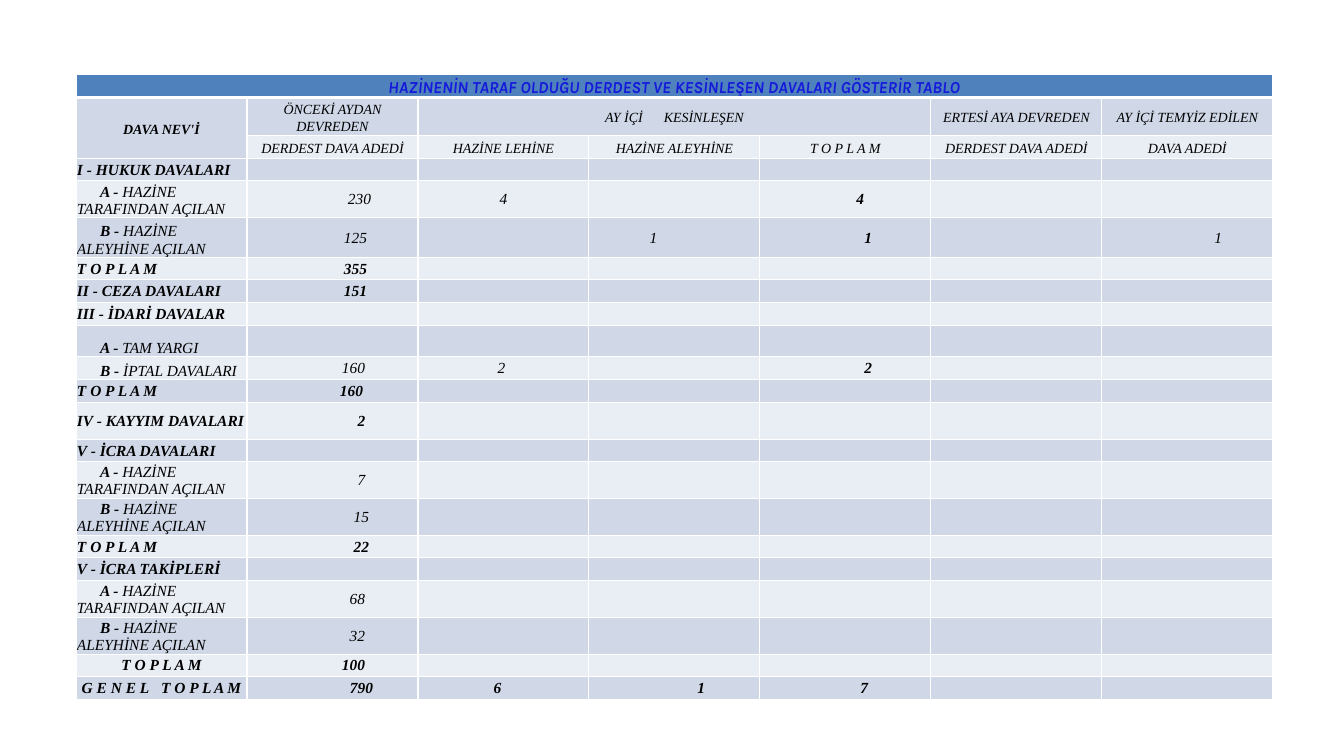
from lxml import etree
from pptx import Presentation
from pptx import util as u
from pptx.dml.color import RGBColor
from pptx.enum import text
from pptx.oxml.ns import qn

# Content: "~" marks one widened space
TITLE = "HAZİNENİN TARAF OLDUĞU DERDEST VE KESİNLEŞEN DAVALARI GÖSTERİR TABLO"
HEADERS = [
    {0: "DAVA NEV'İ", 1: "ÖNCEKİ AYDAN DEVREDEN", 2: "AY İÇİ~KESİNLEŞEN",
     5: "ERTESİ AYA DEVREDEN", 6: "AY İÇİ TEMYİZ EDİLEN"},
    {1: "DERDEST DAVA ADEDİ", 2: "HAZİNE LEHİNE", 3: "HAZİNE ALEYHİNE",
     4: "T O P L A M", 5: "DERDEST DAVA ADEDİ", 6: "DAVA ADEDİ"},
]
BY_TREASURY, AGAINST = "HAZİNE TARAFINDAN AÇILAN", "HAZİNE ALEYHİNE AÇILAN"
TOTAL = "T O P L A M"
# (letter, label, height px, {column: (value, px right of the column centre)})
ROWS = [
    ("", "I - HUKUK DAVALARI", 22, {}),
    ("A", BY_TREASURY, 37, {1: (230, 27), 2: (4, 0), 4: (4, 15)}),
    ("B", AGAINST, 40, {1: (125, 23), 3: (1, -21), 4: (1, 23), 6: (1, 31)}),
    ("", TOTAL, 22, {1: (355, 23)}),
    ("", "II - CEZA DAVALARI", 23, {1: (151, 23)}),
    ("", "III - İDARİ DAVALAR", 23, {}),
    ("A", "TAM YARGI", 31, {}),
    ("B", "İPTAL DAVALARI", 23, {1: (160, 21), 2: (2, -2), 4: (2, 23)}),
    ("", TOTAL, 23, {1: (160, 19)}),
    ("", "IV - KAYYIM DAVALARI", 37, {1: (2, 29)}),
    ("", "V - İCRA DAVALARI", 22, {}),
    ("A", BY_TREASURY, 37, {1: (7, 29)}),
    ("B", AGAINST, 37, {1: (15, 29)}),
    ("", TOTAL, 22, {1: (22, 29)}),
    ("", "V - İCRA TAKİPLERİ", 23, {}),
    ("A", BY_TREASURY, 37, {1: (68, 25)}),
    ("B", AGAINST, 37, {1: (32, 25)}),
    ("", TOTAL, 22, {1: (100, 21)}),
    ("", "G E N E L~T O P L A M", 23, {1: (790, 29), 2: (6, -6), 3: (1, 27), 4: (7, 19)}),
]
HEIGHTS = [23, 38, 23] + [row[2] for row in ROWS]
COLUMNS, COLUMN_WIDTH, LEFT, TOP = 7, 171, 76, 74
SUB_INDENT = 23
HEADER_GAP, TOTAL_GAP = 1250, 550  # extra width of "~", hundredths of a point

WHITE = RGBColor(0xFF, 0xFF, 0xFF)
BLACK = RGBColor(0, 0, 0)
TITLE_BLUE = RGBColor(0x15, 0x1A, 0xDB)
TITLE_FILL = RGBColor(0x4F, 0x81, 0xBD)
BANDS = [RGBColor(0xE9, 0xED, 0xF4), RGBColor(0xD0, 0xD8, 0xE8)]
CENTER, LEFT_ALIGN = text.PP_ALIGN.CENTER, text.PP_ALIGN.LEFT
MIDDLE, BOTTOM = text.MSO_ANCHOR.MIDDLE, text.MSO_ANCHOR.BOTTOM
SERIF = {"name": "Times New Roman", "italic": True}
BODY = {**SERIF, "size": u.Pt(11)}
HEAD = {**SERIF, "size": u.Pt(10)}


def px(length):
    return u.Emu(round(length * 914400 / 100.8))


def set_all(target, values):
    for name, value in values.items():
        setattr(target, name, value)


def add_span(para, words, font, bold, color=BLACK):
    span = para.add_run()
    span.text = words
    set_all(span.font, {**font, "bold": bold})
    span.font.color.rgb = color
    return span


def write(cell, spans, font, align=CENTER, anchor=MIDDLE, spacing=None,
          shift=0, gap=0, color=BLACK):
    """Fill a cell with (words, bold) spans, moved sideways by shift."""
    set_all(cell, {"vertical_anchor": anchor, "margin_left": px(1 + 2 * max(shift, 0)),
                   "margin_right": px(1 + 2 * max(-shift, 0))})
    para = cell.text_frame.paragraphs[0]
    set_all(para, {"alignment": align, "line_spacing": spacing})
    for words, bold in spans:
        for number, part in enumerate(words.split("~")):
            if number:
                space = add_span(para, " ", font, bold, color)
                space.font._element.set("spc", str(gap))
            add_span(para, part, font, bold, color)
    return para


def format_cell(cell, fill, bottom=1):
    set_all(cell, {"margin_left": 0, "margin_right": 0,
                   "margin_top": px(1), "margin_bottom": 0})
    properties = cell._tc.get_or_add_tcPr()
    for side, points in (("L", 1), ("R", 1), ("T", 1), ("B", bottom)):
        line = etree.SubElement(properties, qn("a:ln" + side), w=str(u.Pt(points)))
        paint = etree.SubElement(line, qn("a:solidFill"))
        etree.SubElement(paint, qn("a:srgbClr"), val=str(WHITE))
    cell.fill.solid()
    cell.fill.fore_color.rgb = fill
    # Small end mark keeps empty rows at their height
    paragraph = cell.text_frame.paragraphs[0]._p
    etree.SubElement(paragraph, qn("a:endParaRPr"), sz="1000")


def main():
    deck = Presentation()
    set_all(deck, {"slide_width": px(1344), "slide_height": px(756)})
    page = deck.slides.add_slide(deck.slide_layouts[6])

    # Grid
    table = page.shapes.add_table(len(HEIGHTS), COLUMNS, px(LEFT), px(TOP),
                                  px(COLUMNS * COLUMN_WIDTH), px(sum(HEIGHTS))).table
    set_all(table, {"first_row": False, "horz_banding": False})
    for column in table.columns:
        column.width = px(COLUMN_WIDTH)
    for r, height in enumerate(HEIGHTS):
        table.rows[r].height = px(height)
        for c in range(COLUMNS):
            format_cell(table.cell(r, c), BANDS[r % 2] if r else TITLE_FILL, 1 if r else 3)
    for first, last in (((0, 0), (0, 6)), ((1, 0), (2, 0)), ((1, 2), (1, 4))):
        table.cell(*first).merge(table.cell(*last))

    # Title and column headers
    write(table.cell(0, 0), [(TITLE, True)],
          {"name": "Karla", "italic": True, "size": u.Pt(12)},
          anchor=BOTTOM, spacing=1.15, color=TITLE_BLUE)
    for r, headers in enumerate(HEADERS, 1):
        for c, words in headers.items():
            write(table.cell(r, c), [(words, c == 0)], HEAD, spacing=1.15, gap=HEADER_GAP)

    # Case rows
    for r, (letter, label, _, values) in enumerate(ROWS, 3):
        cell = table.cell(r, 0)
        if letter:
            para = write(cell, [(letter + " -", True), (" " + label, False)], BODY,
                         LEFT_ALIGN, BOTTOM)
            para._p.get_or_add_pPr().set("indent", str(px(SUB_INDENT)))
        else:
            closing = r >= len(HEIGHTS) - 2
            write(cell, [(label, True)], BODY, CENTER if closing else LEFT_ALIGN,
                  gap=TOTAL_GAP)
        for c, (value, shift) in values.items():
            write(table.cell(r, c), [(str(value), not letter or c == 4)], BODY, shift=shift)

    deck.save("out.pptx")


if __name__ == "__main__":
    main()
